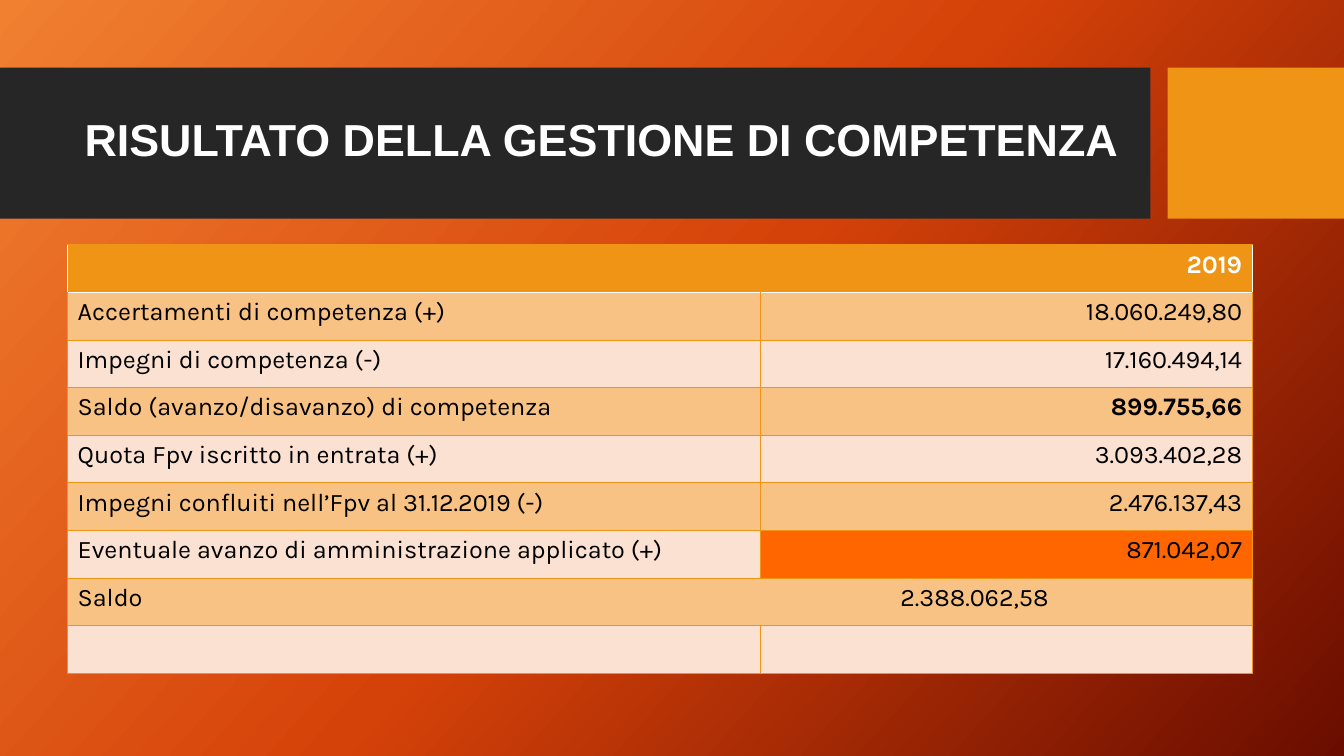
from pptx import Presentation, oxml, util as u
from pptx.dml.color import RGBColor
from pptx.enum import shapes, text
from pptx.oxml.ns import nsdecls
from lxml import etree

theme = dict(dark="262626", gold="F09415", band="F7C284", pale="FAE1D2",
             hot="FF6600", white="FFFFFF", ink="000000",
             grad=((0, "F18031"), (50, "D54209"), (100, "6A0D00")),
             head="Arial", body="Karla", big=32, mid=18)
NS = nsdecls("a", "p")


def put(frame, words, size=theme["mid"], font=theme["body"], color=theme["ink"],
        bold=False, align="LEFT", lead=1.0, tab=None):
    para = frame.paragraphs[0]
    if tab:
        stops = etree.SubElement(para._p.get_or_add_pPr(), oxml.ns.qn("a:tabLst"))
        etree.SubElement(stops, oxml.ns.qn("a:tab"), pos=str(u.Inches(tab)), algn="l")
    para.alignment = getattr(text.PP_ALIGN, align)
    para.line_spacing = lead
    para.font.size = u.Pt(size)
    if words:
        run = para.add_run()
        run.text = words
        run.font.size, run.font.name, run.font.bold = u.Pt(size), font, bold
        run.font.color.rgb = RGBColor.from_string(color)


def edge(cell, sides, color, width):
    props = cell._tc.get_or_add_tcPr()
    for spot, side in enumerate(sides):
        paint = f'<a:solidFill><a:srgbClr val="{color}"/></a:solidFill>' if width else "<a:noFill/>"
        props.insert(spot, oxml.parse_xml(
            f'<a:ln{side} {NS} w="{u.Pt(width)}">{paint}</a:ln{side}>'))


deck = Presentation()
deck.slide_width, deck.slide_height = u.Inches(13.33), u.Inches(7.5)
slide = deck.slides.add_slide(deck.slide_layouts[6])

stops = "".join(f'<a:gs pos="{at * 1000}"><a:srgbClr val="{tone}"/></a:gs>'
                for at, tone in theme["grad"])
slide.element.cSld.insert(0, oxml.parse_xml(
    f'<p:bg {NS}><p:bgPr><a:gradFill rotWithShape="1"><a:gsLst>{stops}</a:gsLst>'
    f'<a:lin ang="{42 * 60000}" scaled="0"/></a:gradFill><a:effectLst/></p:bgPr></p:bg>'))

for left, wide, tone in ((0, 11.41, "dark"), (11.58, 1.75, "gold")):
    bar = slide.shapes.add_shape(shapes.MSO_SHAPE.RECTANGLE, u.Inches(left),
                                 u.Inches(0.67), u.Inches(wide), u.Inches(1.5))
    bar.shadow.inherit = False
    bar.fill.solid()
    bar.fill.fore_color.rgb = RGBColor.from_string(theme[tone])
    bar.line.fill.background()

title = slide.shapes.add_textbox(u.Inches(0.74), u.Inches(0.82), u.Inches(10.51), u.Inches(1.18))
title.text_frame.word_wrap = True
title.text_frame.vertical_anchor = text.MSO_ANCHOR.MIDDLE
put(title.text_frame, "RISULTATO DELLA GESTIONE DI COMPETENZA", size=theme["big"],
    font=theme["head"], color=theme["white"], bold=True, lead=0.9)

rows = [("", "2019"),
        ("Accertamenti di competenza (+)", "18.060.249,80"),
        ("Impegni di competenza (-)", "17.160.494,14"),
        ("Saldo (avanzo/disavanzo) di competenza", "899.755,66"),
        ("Quota Fpv iscritto in entrata (+)", "3.093.402,28"),
        ("Impegni confluiti nell’Fpv al 31.12.2019 (-)", "2.476.137,43"),
        ("Eventuale avanzo di amministrazione applicato (+)", "871.042,07"),
        ("Saldo\t2.388.062,58", ""),
        ("", "")]
total = 7
grid = slide.shapes.add_table(len(rows), 2, u.Inches(0.67), u.Inches(2.43),
                              u.Inches(11.75), u.Inches(4.25)).table
for col, wide in zip(grid.columns, (6.87, 4.88)):
    col.width = u.Inches(wide)
grid.cell(total, 0).merge(grid.cell(total, 1))

for r, row in enumerate(rows):
    grid.rows[r].height = u.Inches(4.25 / len(rows))
    for c, words in enumerate(row):
        cell = grid.cell(r, c)
        tone = "gold" if r == 0 else "hot" if (r, c) == (6, 1) else "band" if r % 2 else "pale"
        cell.fill.solid()
        cell.fill.fore_color.rgb = RGBColor.from_string(theme[tone])
        if r == 0:
            edge(cell, "B", theme["white"], 1)
            edge(cell, "T", theme["gold"], 0.75)
            edge(cell, "R" if c == 0 else "L", theme["gold"], 0)
        else:
            edge(cell, "LRB" if r == 1 else "LRTB", theme["gold"], 0.75)
        put(cell.text_frame, words, color=theme["white" if r == 0 else "ink"],
            bold=(r, c) in ((0, 1), (3, 1)), align="RIGHT" if c else "LEFT",
            tab=8.16 if (r, c) == (total, 0) else None)

deck.save("out.pptx")
